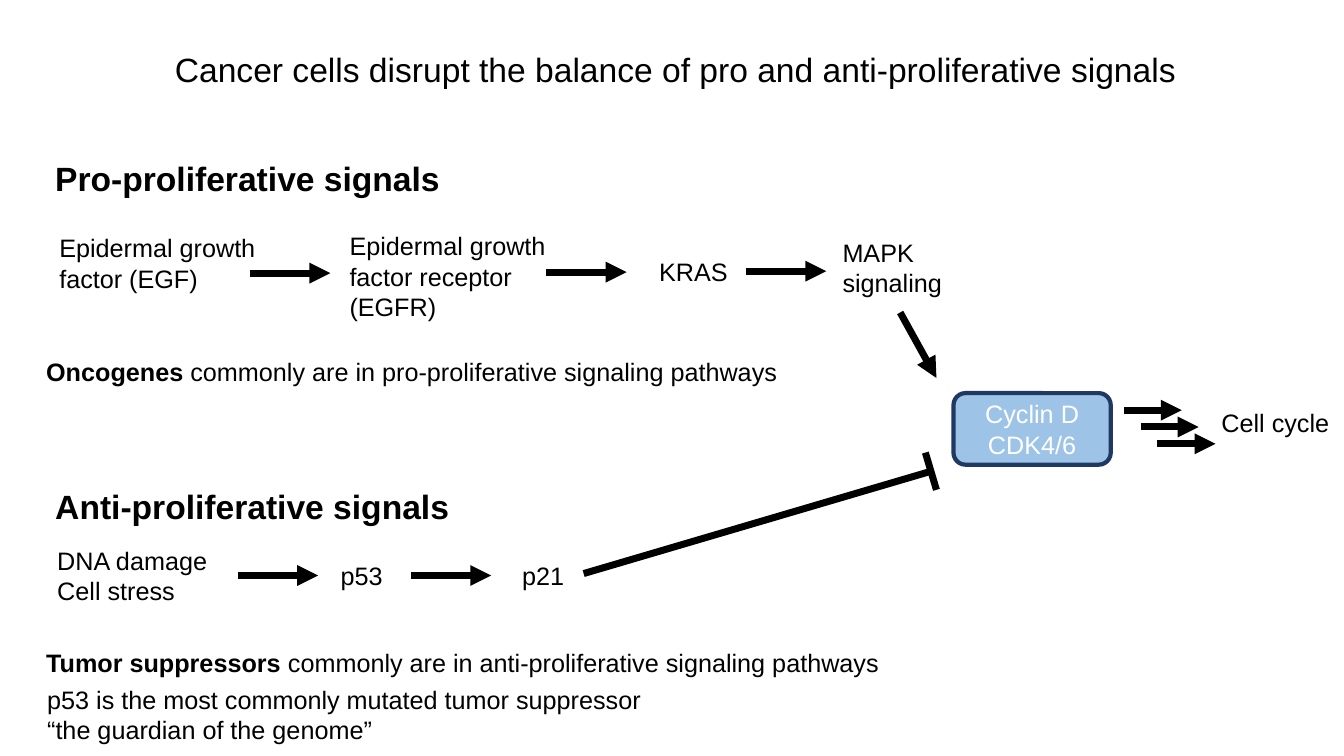
from lxml import etree
from pptx import Presentation
from pptx.dml.color import RGBColor
from pptx.enum.shapes import MSO_CONNECTOR, MSO_SHAPE
from pptx.enum.text import MSO_ANCHOR, MSO_AUTO_SIZE, PP_ALIGN
from pptx.oxml.ns import qn
from pptx.util import Pt

FONT = "Arial"
COLORS = {"text": "000000", "arrow": "000000", "complex_fill": "9DC3E6",
          "complex_line": "203864", "complex_text": "FFFFFF"}
ARROW_LENGTH = 57.4
CASCADE_LENGTH = 41.4
CASCADE_STEP = 12


def color(name):
    return RGBColor.from_string(COLORS[name])


def format_paragraph(paragraph, size=18, color_name="text"):
    paragraph.font.name = FONT
    paragraph.font.size = Pt(size)
    paragraph.font.color.rgb = color(color_name)


def place(shape, left, top, width, height):
    shape.left, shape.top = Pt(left), Pt(top)
    shape.width, shape.height = Pt(width), Pt(height)


def set_title(slide, text):
    title = slide.shapes.title
    place(title, 18.7, 28.8, 927.4, 44.6)
    frame = title.text_frame
    frame.text = text
    frame.word_wrap = True
    frame.auto_size = MSO_AUTO_SIZE.NONE
    frame.vertical_anchor = MSO_ANCHOR.MIDDLE
    paragraph = frame.paragraphs[0]
    paragraph.alignment = PP_ALIGN.CENTER
    paragraph.line_spacing = 0.9
    format_paragraph(paragraph, 24)


def add_label(slide, text, left, top, width, height, wrap=True):
    """Add a text box with one paragraph for each line of text."""
    box = slide.shapes.add_textbox(Pt(left), Pt(top), Pt(width), Pt(height))
    frame = box.text_frame
    frame.text = text
    frame.word_wrap = wrap
    frame.auto_size = MSO_AUTO_SIZE.SHAPE_TO_FIT_TEXT
    for paragraph in frame.paragraphs:
        format_paragraph(paragraph)
    return box


def add_heading(slide, text, top):
    box = add_label(slide, text, 32.4, top, 302.4, 36)
    paragraph = box.text_frame.paragraphs[0]
    format_paragraph(paragraph, 24)
    paragraph.font.bold = True


def add_statement(slide, term, rest, top, width):
    """Add a sentence that opens with a bold term."""
    box = add_label(slide, term, 25.9, top, width, 28.8, wrap=False)
    paragraph = box.text_frame.paragraphs[0]
    paragraph.runs[0].font.bold = True
    paragraph.add_run().text = rest


def add_line(slide, start, end, arrow=False):
    points = [Pt(value) for value in (*start, *end)]
    connector = slide.shapes.add_connector(MSO_CONNECTOR.STRAIGHT, *points)
    connector.line.color.rgb = color("arrow")
    connector.line.width = Pt(5)
    if arrow:
        line = connector.line._get_or_add_ln()
        etree.SubElement(line, qn("a:tailEnd"), type="triangle")
    etree.SubElement(connector._element.spPr, qn("a:effectLst"))
    return connector


def add_right_arrow(slide, left, top, length=ARROW_LENGTH):
    return add_line(slide, (left, top), (left + length, top), arrow=True)


def add_complex(slide, text, left, top, width, height):
    shape = slide.shapes.add_shape(MSO_SHAPE.ROUNDED_RECTANGLE,
                                   Pt(left), Pt(top), Pt(width), Pt(height))
    shape.shadow.inherit = False
    shape.fill.solid()
    shape.fill.fore_color.rgb = color("complex_fill")
    shape.line.color.rgb = color("complex_line")
    shape.line.width = Pt(3)
    frame = shape.text_frame
    frame.text = text
    frame.word_wrap = True
    frame.vertical_anchor = MSO_ANCHOR.MIDDLE
    paragraph = frame.paragraphs[0]
    paragraph.alignment = PP_ALIGN.CENTER
    format_paragraph(paragraph, color_name="complex_text")


def add_pro_pathway(slide):
    add_heading(slide, "Pro-proliferative signals", 109.4)
    add_label(slide, "Epidermal growth factor (EGF)", 35.3, 162.7, 170.6, 51.1)
    add_label(slide, "Epidermal growth factor receptor (EGFR)", 242.6, 161.3, 185, 72.7)
    kras = add_label(slide, "KRAS", 463.7, 179.3, 69.1, 28.8)
    add_label(slide, "MAPK signaling", 594.7, 165.6, 121, 51.1)
    add_right_arrow(slide, 178.6, 195.1)
    add_right_arrow(slide, 390.2, 194.4)
    add_right_arrow(slide, 532.8, 193.7).begin_connect(kras, 3)
    add_line(slide, (643, 223.2), (668.9, 270), arrow=True)
    add_statement(slide, "Oncogenes",
                  " commonly are in pro-proliferative signaling pathways", 251.3, 541.4)


def add_anti_pathway(slide):
    add_heading(slide, "Anti-proliferative signals", 343.4)
    add_label(slide, "DNA damage\nCell stress", 33.8, 385.9, 128.9, 51.1)
    p53 = add_label(slide, "p53", 236.2, 396.7, 57.3, 28.8)
    add_label(slide, "p21", 365.8, 396.7, 57.3, 28.8)
    add_right_arrow(slide, 169.9, 411.1)
    add_right_arrow(slide, 293.5, 411.1).begin_connect(p53, 3)
    # Inhibition line with its blunt end
    add_line(slide, (416.9, 409.7), (663.8, 337))
    add_line(slide, (668.9, 349.9), (661, 323.3))
    add_statement(slide, "Tumor suppressors ",
                  "commonly are in anti-proliferative signaling pathways", 458.6, 614.9)
    add_label(slide, "p53 is the most commonly mutated tumor suppressor\n"
              "“the guardian of the genome”", 26.6, 485.3, 442.8, 51.1, wrap=False)


def add_cell_cycle(slide):
    add_complex(slide, "Cyclin D CDK4/6", 681.1, 280.8, 112.3, 51.1)
    for step in range(3):
        offset = step * CASCADE_STEP
        add_right_arrow(slide, 802.8 + offset, 293 + offset, CASCADE_LENGTH)
    add_label(slide, "Cell cycle", 865.4, 287.3, 97.9, 28.8)


def main():
    presentation = Presentation()
    presentation.slide_width, presentation.slide_height = Pt(960), Pt(540)
    slide = presentation.slides.add_slide(presentation.slide_layouts[5])
    set_title(slide, "Cancer cells disrupt the balance of pro and anti-proliferative signals")
    add_pro_pathway(slide)
    add_anti_pathway(slide)
    add_cell_cycle(slide)
    presentation.save("out.pptx")


if __name__ == "__main__":
    main()
